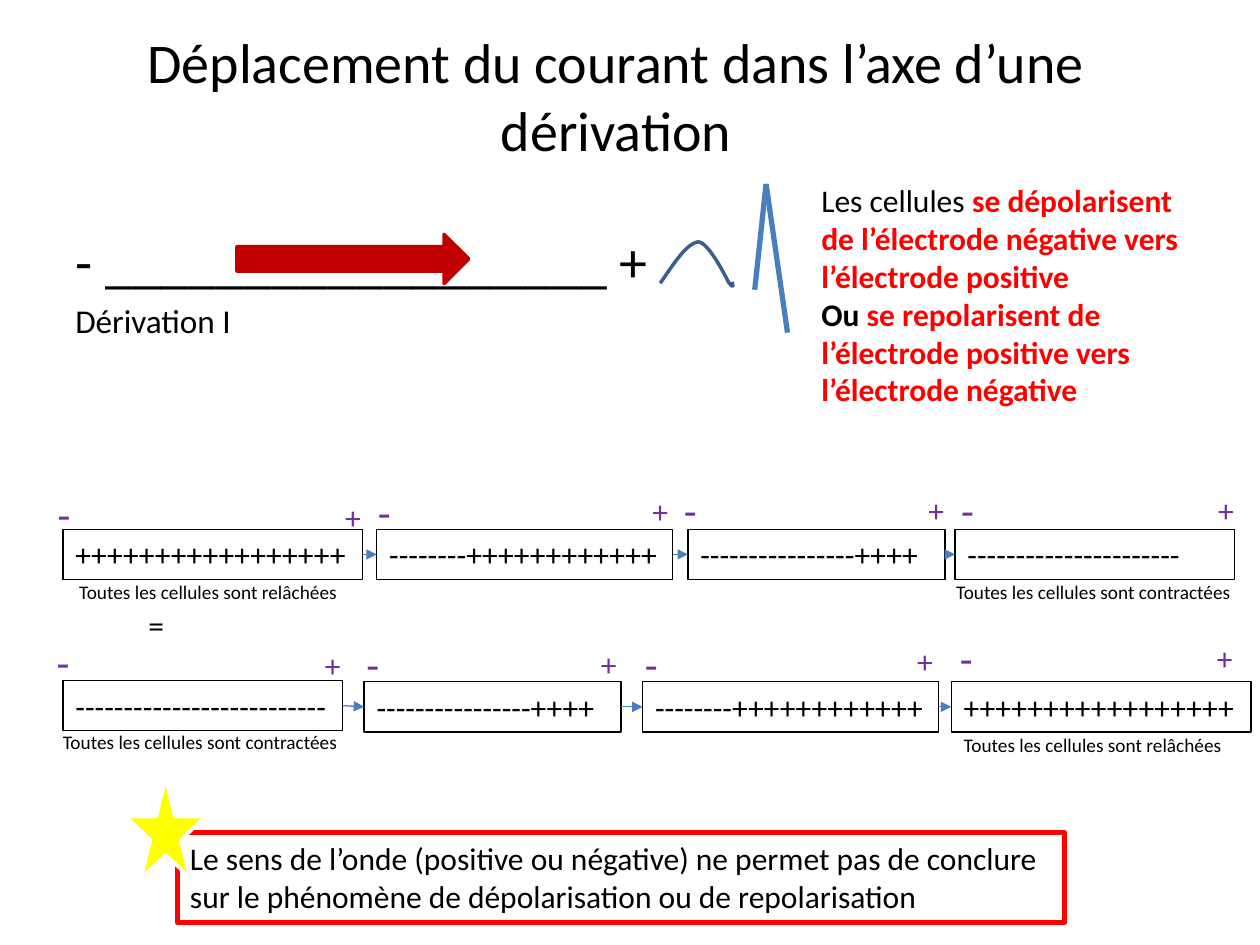
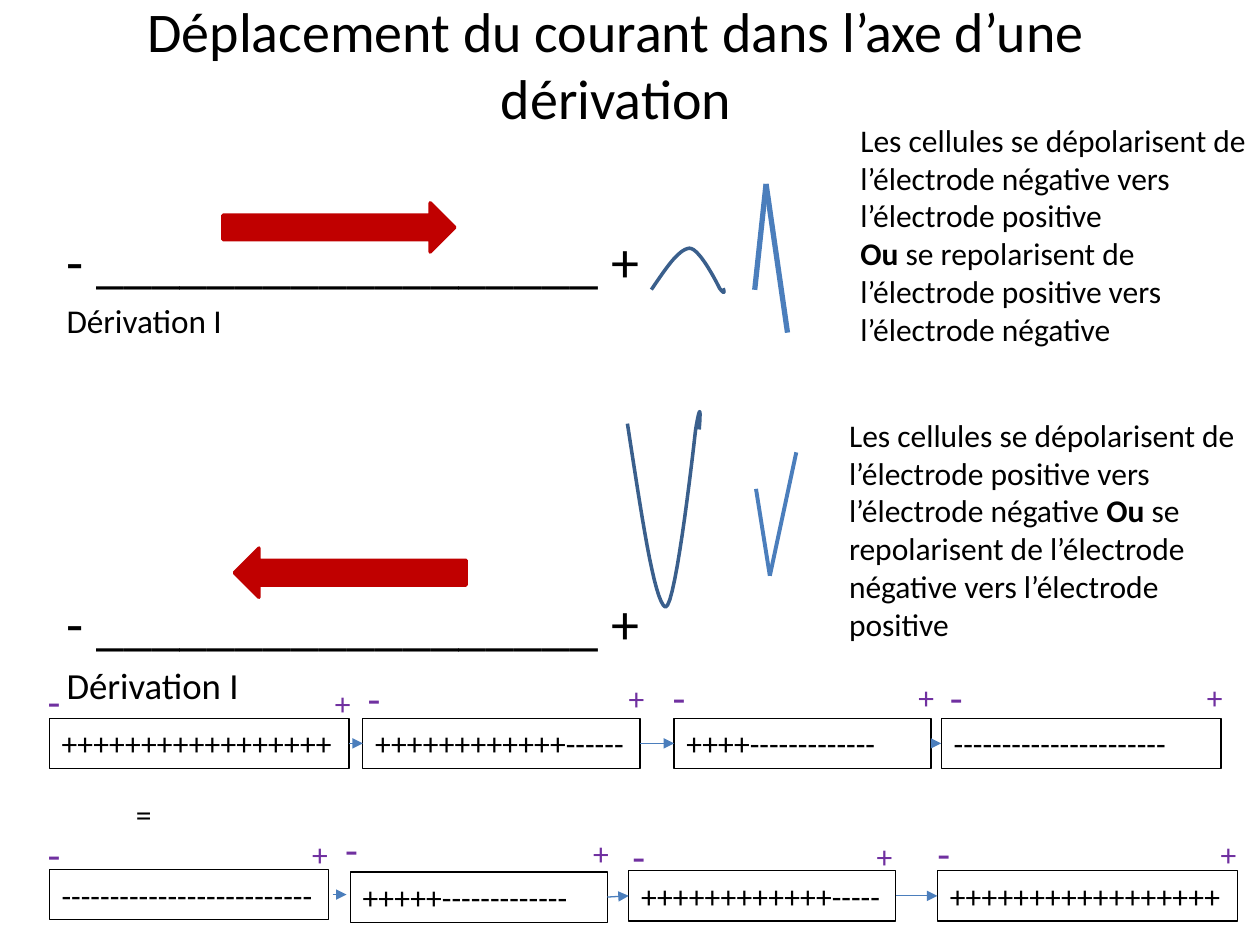
from dataclasses import dataclass
from itertools import pairwise
from lxml import etree
from pptx import Presentation
from pptx.dml.color import RGBColor
from pptx.enum.shapes import MSO_CONNECTOR as Link, MSO_SHAPE as Shape
from pptx.enum.text import MSO_ANCHOR as Anchor, PP_ALIGN as Align
from pptx.oxml.ns import qn
from pptx.util import Inches, Pt


@dataclass(frozen=True)
class Theme:
    font: str = "Calibri"
    black: str = "000000"
    white: str = "FFFFFF"
    red: str = "FF0000"
    arrow: str = "C00000"
    blue: str = "4B7EBC"
    curve: str = "3A5F8C"
    purple: str = "7030A0"
    yellow: str = "FFFF00"
    title: int = 32
    sign: int = 24
    lead: int = 19
    body: int = 18
    caption: int = 11


@dataclass(frozen=True)
class Cell:
    x: float
    w: float
    text: str
    minus: tuple
    plus: tuple
    dy: float = 0
    linked: bool = True


T = Theme()
TITLE = "Déplacement du courant dans l’axe d’une dérivation"
RELAXED = "Toutes les cellules sont relâchées"
CONTRACTED = "Toutes les cellules sont contractées"
CELL_H = 0.4
WAVE = [(0, 0.94), (0.19, 0.49), (0.37, 0.03), (0.53, 0), (0.68, 0),
        (0.95, 0.91), (0.95, 0.91), (1.02, 1.06), (1.02, 1), (1, 0.91)]
PEAK = [(5.99, 2.3), (6.08, 1.46), (6.25, 2.64)]
TROUGH = [(6, 3.88), (6.11, 4.57), (6.32, 3.59)]


def rgb(color):
    return RGBColor.from_string(color)


def stroke(line, color, width):
    line.color.rgb = rgb(color)
    line.width = Pt(width)


def style(p, size, color=T.black):
    p.font.name = T.font
    p.font.size = Pt(size)
    p.font.color.rgb = rgb(color)


def add_text(s, box, text, size=T.body, color=T.black):
    sp = s.shapes.add_textbox(*map(Inches, box))
    tf = sp.text_frame
    tf.word_wrap = True
    p = tf.paragraphs[0]
    p.text = text
    style(p, size, color)
    return sp


def add_title(s, top):
    sp = add_text(s, (0.28, top, 9.22, 1.25), TITLE, T.title)
    sp.text_frame.vertical_anchor = Anchor.MIDDLE
    sp.text_frame.paragraphs[0].alignment = Align.CENTER


def add_lead(s, x, y, size=T.lead):
    sp = add_text(s, (x, y, 5, 1.1), "- __________________ +", T.title)
    p = sp.text_frame.add_paragraph()
    p.text = "Dérivation I"
    p.space_before = Pt(size * 0.2)
    style(p, size)


def add_note(s, x, y, paragraphs):
    sp = s.shapes.add_textbox(*map(Inches, (x, y, 3.29, 1.92)))
    tf = sp.text_frame
    tf.word_wrap = True
    for i, runs in enumerate(paragraphs):
        p = tf.add_paragraph() if i else tf.paragraphs[0]
        style(p, T.body)
        for text, bold, color in runs:
            r = p.add_run()
            r.text = text
            r.font.bold = bold
            r.font.color.rgb = rgb(color)


def add_preset(s, kind, box, fill, line):
    sp = s.shapes.add_shape(kind, *map(Inches, box))
    sp.shadow.inherit = False
    sp.fill.solid()
    sp.fill.fore_color.rgb = rgb(fill)
    stroke(sp.line, line, 2)
    return sp


def add_current(s, x, y, angle=0):
    sp = add_preset(s, Shape.RIGHT_ARROW, (x, y, 1.84, 0.39), T.arrow, T.arrow)
    sp.rotation = angle


def add_line(s, start, end, width=0.75, arrow=False):
    c = s.shapes.add_connector(Link.STRAIGHT, *map(Inches, (*start, *end)))
    stroke(c.line, T.blue, width)
    etree.SubElement(c._element.spPr, qn("a:effectLst"))
    if arrow:
        ln = c.line._get_or_add_ln()
        etree.SubElement(ln, qn("a:tailEnd"), type="triangle")
    return c


def add_spike(s, points, width):
    for start, end in pairwise(points):
        add_line(s, start, end, width)


def bezier(points, t):
    weights = ((1 - t) ** 3, 3 * t * (1 - t) ** 2, 3 * t * t * (1 - t), t ** 3)
    return tuple(sum(k * v for k, v in zip(weights, axis)) for axis in zip(*points))


def add_wave(s, box, flip=False):
    x, y, w, h = box
    steps = 16
    curve = [WAVE[0]]
    for i in range(0, len(WAVE) - 1, 3):
        curve += [bezier(WAVE[i:i + 4], n / steps) for n in range(1, steps + 1)]
    dots = [(Inches(x + u * w), Inches(y + (1 - v if flip else v) * h)) for u, v in curve]
    builder = s.shapes.build_freeform(*dots[0])
    builder.add_line_segments(dots[1:], close=False)
    sp = builder.convert_to_shape()
    sp.shadow.inherit = False
    sp.fill.background()
    stroke(sp.line, T.curve, 2)


def add_cells(s, x, y, cells):
    boxes = []
    for cell in cells:
        left, top = x + cell.x, y + cell.dy
        sp = add_text(s, (left, top, cell.w, CELL_H), cell.text)
        stroke(sp.line, T.black, 0.75)
        boxes.append(sp)
        dx, dy = cell.minus
        add_text(s, (left + dx, top + dy, 0.31, 0.5), "-", T.sign, T.purple)
        dx, dy = cell.plus
        add_text(s, (left + cell.w + dx, top + dy, 0.33, 0.4), "+", T.body, T.purple)
    for cell, (a, b) in zip(cells, pairwise(boxes)):
        if cell.linked:
            c = add_line(s, (0, 0), (1, 1), arrow=True)
            c.begin_connect(a, 3)
            c.end_connect(b, 1)


def add_equals(s, x, y):
    add_text(s, (x, y, 0.33, 0.4), "=")


def add_conclusion(s, x, y):
    sp = add_text(s, (x, y, 7.04, 0.71),
                  "Le sens de l’onde (positive ou négative) ne permet pas de conclure "
                  "sur le phénomène de dépolarisation ou de repolarisation")
    stroke(sp.line, T.red, 3)
    add_preset(s, Shape.STAR_5_POINT, (x - 0.41, y - 0.43, 0.63, 0.79), T.yellow, T.white)


def build_same_direction(s):
    add_title(s, 0.13)
    add_lead(s, 0.5, 1.75)
    add_wave(s, (5.24, 1.92, 0.57, 0.35))
    add_spike(s, PEAK, 3)
    add_current(s, 1.88, 1.86)
    add_note(s, 6.42, 1.39, [
        [("Les cellules ", False, T.black),
         ("se dépolarisent de l’électrode négative vers l’électrode positive", True, T.red)],
        [("Ou ", True, T.black),
         ("se repolarisent de l’électrode positive vers l’électrode négative", True, T.red)],
    ])
    add_cells(s, 0.5, 4.2, [
        Cell(0, 2.38, "+++++++++++++++++", (-0.14, -0.37), (-0.24, -0.3)),
        Cell(2.49, 2.35, "--------++++++++++++", (-0.09, -0.39), (-0.26, -0.34)),
        Cell(4.96, 2.04, "----------------++++", (-0.13, -0.4), (-0.23, -0.35)),
        Cell(7.08, 2.22, "----------------------", (-0.05, -0.4), (-0.23, -0.35)),
    ])
    add_equals(s, 1.08, 4.76)
    add_cells(s, 0.5, 5.4, [
        Cell(0, 2.22, "--------------------------", (-0.15, -0.4), (-0.24, -0.32)),
        Cell(2.39, 2.04, "----------------++++", (-0.08, -0.39), (-0.26, -0.34), 0.01),
        Cell(4.6, 2.35, "--------++++++++++++", (-0.08, -0.39), (-0.27, -0.36), 0.01),
        Cell(7.05, 2.38, "+++++++++++++++++", (-0.03, -0.44), (-0.37, -0.39), 0.01),
    ])
    for x, y, text in [(0.53, 4.56, RELAXED), (7.49, 4.56, CONTRACTED),
                       (0.4, 5.75, CONTRACTED), (7.55, 5.77, RELAXED)]:
        add_text(s, (x, y, 2.49, 0.29), text, T.caption)
    add_conclusion(s, 1.41, 6.61)


def build_both_directions(s):
    add_title(s, -0.12)
    add_lead(s, 0.43, 1.75)
    add_lead(s, 0.43, 4.62, 21)
    add_wave(s, (5.17, 1.97, 0.57, 0.35))
    add_spike(s, PEAK, 3)
    add_wave(s, (4.98, 3.27, 0.57, 1.55), flip=True)
    add_spike(s, TROUGH, 2.25)
    add_current(s, 1.77, 1.61)
    add_current(s, 1.86, 4.35, 180)
    add_note(s, 6.73, 0.91, [
        [("Les cellules se dépolarisent de l’électrode négative vers l’électrode positive",
          False, T.black)],
        [("Ou", True, T.black),
         (" se repolarisent de l’électrode positive vers l’électrode négative", False, T.black)],
    ])
    add_note(s, 6.64, 3.25, [
        [("Les cellules se dépolarisent de l’électrode positive vers l’électrode négative",
          False, T.black),
         (" Ou ", True, T.black),
         ("se repolarisent de l’électrode négative vers l’électrode positive", False, T.black)],
    ])
    add_cells(s, 0.39, 5.7, [
        Cell(0, 2.38, "+++++++++++++++++", (-0.11, -0.39), (-0.21, -0.32)),
        Cell(2.49, 2.2, "++++++++++++------", (-0.06, -0.41), (-0.19, -0.36)),
        Cell(4.96, 2.04, "++++-------------", (-0.11, -0.42), (-0.2, -0.37)),
        Cell(7.08, 2.22, "----------------------", (-0.03, -0.42), (-0.21, -0.37)),
    ])
    add_equals(s, 0.98, 6.26)
    add_cells(s, 0.39, 6.9, [
        Cell(0, 2.22, "--------------------------", (-0.11, -0.37), (-0.23, -0.32),
             linked=False),
        Cell(2.39, 2.04, "+++++-------------", (-0.14, -0.43), (-0.21, -0.35), 0.02),
        Cell(4.6, 2.12, "++++++++++++-----", (-0.07, -0.37), (-0.25, -0.32), 0.01),
        Cell(7.05, 2.38, "+++++++++++++++++", (-0.1, -0.39), (-0.23, -0.33), 0.01),
    ])
    add_line(s, (2.64, 7.1), (2.75, 7.1), arrow=True)


def main():
    prs = Presentation()
    prs.slide_width, prs.slide_height = Inches(10), Inches(7.5)
    for build in (build_same_direction, build_both_directions):
        build(prs.slides.add_slide(prs.slide_layouts[6]))
    prs.save("out.pptx")


if __name__ == "__main__":
    main()
